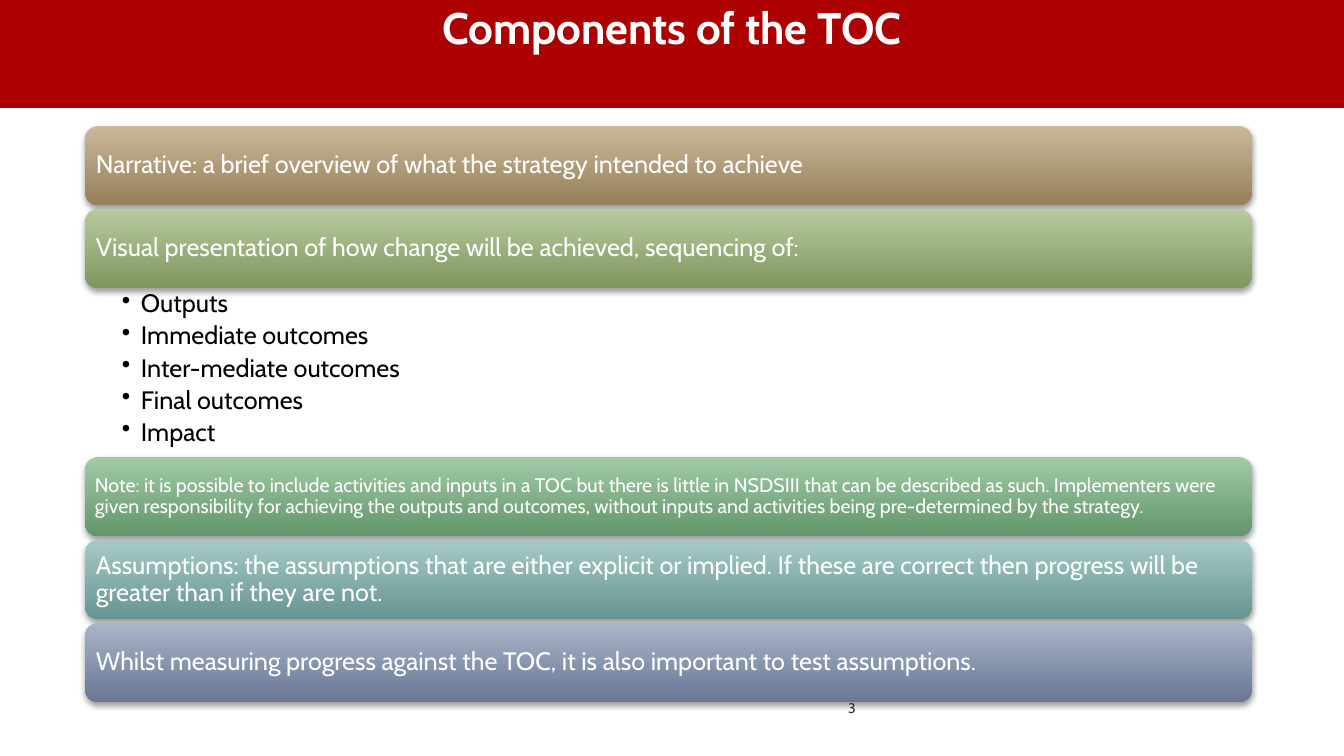
from lxml import etree
from pptx import Presentation
from pptx.dml.color import RGBColor
from pptx.enum.shapes import MSO_SHAPE
from pptx.enum.text import MSO_ANCHOR, PP_ALIGN
from pptx.oxml import parse_xml
from pptx.oxml.ns import nsdecls, qn
from pptx.util import Pt

RECTANGLE = MSO_SHAPE.RECTANGLE
ROUNDED = MSO_SHAPE.ROUNDED_RECTANGLE
TOP, MIDDLE = MSO_ANCHOR.TOP, MSO_ANCHOR.MIDDLE
LEFT, CENTER = PP_ALIGN.LEFT, PP_ALIGN.CENTER

FONT = "Cabin"
WHITE = RGBColor(0xFF, 0xFF, 0xFF)
BLACK = RGBColor(0x00, 0x00, 0x00)
GREY = RGBColor(0x30, 0x30, 0x30)
RED = RGBColor(0xAD, 0x01, 0x01)
SAND = RGBColor(0xCA, 0xB8, 0x9A), RGBColor(0x96, 0x80, 0x5B)
OLIVE = RGBColor(0xB8, 0xCA, 0x9E), RGBColor(0x80, 0x96, 0x5F)
GREEN = RGBColor(0xA2, 0xCA, 0xA8), RGBColor(0x62, 0x96, 0x6A)
TEAL = RGBColor(0xA6, 0xC9, 0xC7), RGBColor(0x66, 0x95, 0x91)
BLUE = RGBColor(0xAA, 0xB4, 0xC9), RGBColor(0x69, 0x77, 0x95)

BAR_LEFT, BAR_WIDTH, BAR_HEIGHT, BAR_PITCH = 85, 1167, 79, 83
SHADOW = (
    f'<a:outerShdw {nsdecls("a")} blurRad="50800" dist="25400" dir="5400000" rotWithShape="0">'
    '<a:srgbClr val="000000"><a:alpha val="38000"/></a:srgbClr></a:outerShdw>'
)


def px(*lengths):
    return [round(length * 12192000 / 1344) for length in lengths]


def write(shape, lines, size, color, align, anchor, insets, bold=False):
    frame = shape.text_frame
    frame.word_wrap = True
    frame.vertical_anchor = anchor
    frame.margin_left, frame.margin_top, frame.margin_right, frame.margin_bottom = px(*insets)
    frame.text = "\n".join(lines)
    for para in frame.paragraphs:
        para.alignment = align
        para.font.name = FONT
        para.font.size = Pt(size)
        para.font.bold = bold
        para.font.color.rgb = color
    return frame.paragraphs


deck = Presentation()
deck.slide_width, deck.slide_height = px(1344, 756)
page = deck.slides.add_slide(deck.slide_layouts[5])

title = page.shapes.title
title.left, title.top, title.width, title.height = px(67, 0, 1210, 108)
write(title, ["Components of the TOC"], 31.5, WHITE, CENTER, TOP, (10, 0, 10, 0), bold=True)

banner = page.shapes.add_shape(RECTANGLE, *px(0, 0, 1344, 108))
banner.shadow.inherit = False
banner.fill.solid()
banner.fill.fore_color.rgb = RED
banner.line.fill.background()
title.element.addprevious(banner.element)

bar_groups = [
    (126, [
        ("Narrative: a brief overview of what the strategy intended to achieve", SAND, 18, 7),
        ("Visual presentation of how change will be achieved, sequencing of:", OLIVE, 18, 7),
    ]),
    (457, [
        ("Note: it is possible to include activities and inputs in a TOC but there is little in "
         "NSDSIII that can be described as such. Implementers were given responsibility for "
         "achieving the outputs and outcomes, without inputs and activities being "
         "pre-determined by the strategy.", GREEN, 14, 6),
        ("Assumptions: the assumptions that are either explicit or implied. If these are correct "
         "then progress will be greater than if they are not.", TEAL, 18, 7),
        ("Whilst measuring progress against the TOC, it is also important to test assumptions.",
         BLUE, 18, 7),
    ]),
]
for group_top, bars in bar_groups:
    for index, (text, colors, size, inset) in enumerate(bars):
        top = group_top + index * BAR_PITCH
        bar = page.shapes.add_shape(ROUNDED, *px(BAR_LEFT, top, BAR_WIDTH, BAR_HEIGHT))
        bar.fill.gradient()
        bar.fill.gradient_angle = 270
        for stop, position, color in zip(bar.fill.gradient_stops, (0, 1), colors):
            stop.position = position
            stop.color.rgb = color
        bar.line.fill.background()
        bar.shadow.inherit = False
        bar.element.spPr.find(qn("a:effectLst")).append(parse_xml(SHADOW))
        for para in write(bar, [text], size, WHITE, LEFT, MIDDLE, [inset] * 4):
            para.line_spacing = 0.9

outcomes = ["Outputs", "Immediate outcomes", "Inter-mediate outcomes", "Final outcomes", "Impact"]
outcome_box = page.shapes.add_textbox(*px(BAR_LEFT, 288, BAR_WIDTH, 169))
indent = px(19)[0]
for para in write(outcome_box, outcomes, 18, BLACK, LEFT, TOP, (37, 3, 14, 3)):
    para.line_spacing = 0.9
    para.space_after = Pt(3.5)
    properties = para._p.get_or_add_pPr()
    properties.set("marL", str(indent))
    properties.set("indent", str(-indent))
    bullet = etree.Element(qn("a:buChar"), char="•")
    properties.find(qn("a:defRPr")).addprevious(bullet)

number_box = page.shapes.add_textbox(*px(767, 687, 170, 41))
write(number_box, ["3"], 10, GREY, CENTER, MIDDLE, (10, 5, 10, 5))

deck.save("out.pptx")
